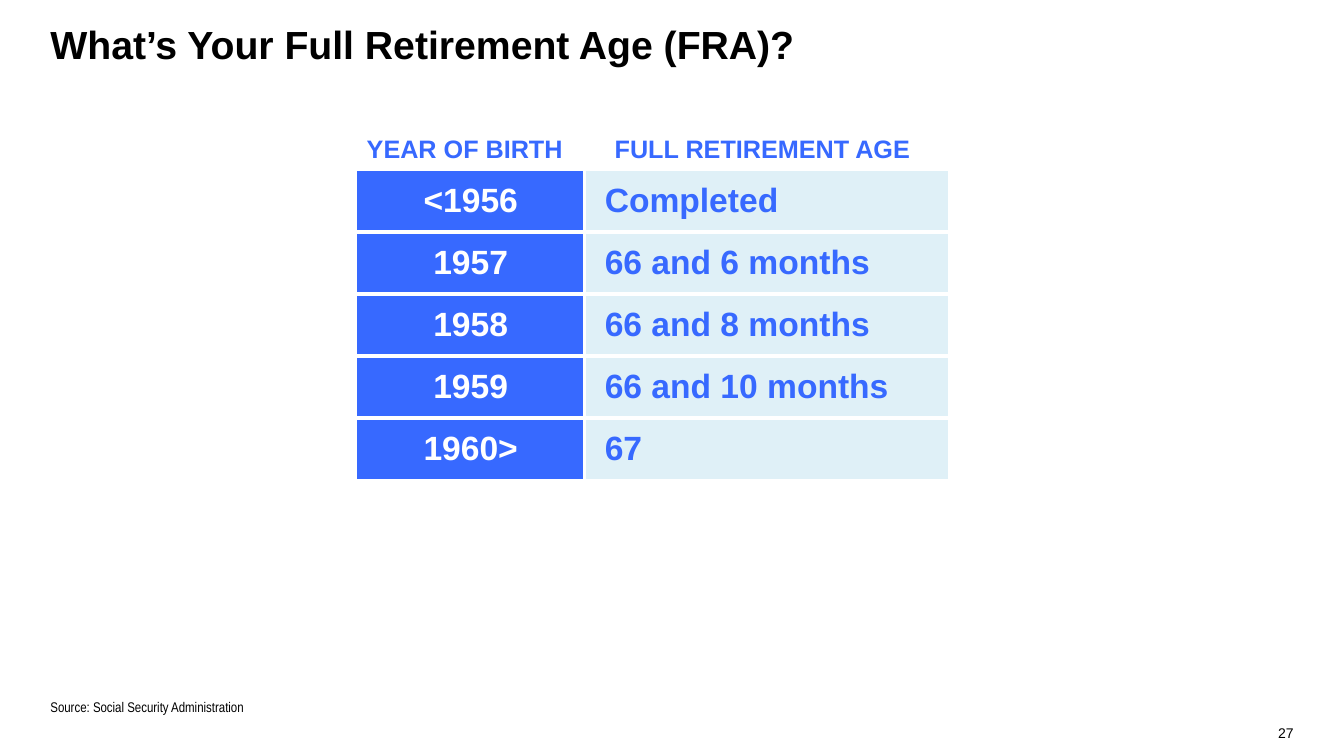
from lxml import etree
from pptx import Presentation, util as u
from pptx.dml.color import RGBColor
from pptx.enum import text
from pptx.oxml.ns import qn

ROWS = [
    ("<1956", "Completed"),
    ("1957", "66 and 6 months"),
    ("1958", "66 and 8 months"),
    ("1959", "66 and 10 months"),
    ("1960>", "67"),
]
BLUE, PALE, WHITE, BLACK = "3769FF", "DFF0F7", "FFFFFF", "000000"
LEFT, MIDDLE, RIGHT = text.PP_ALIGN.LEFT, text.PP_ALIGN.CENTER, text.PP_ALIGN.RIGHT
TOP, CENTRE, BOTTOM = (text.MSO_ANCHOR.TOP, text.MSO_ANCHOR.MIDDLE,
                       text.MSO_ANCHOR.BOTTOM)


def colour(hex_string):
    return RGBColor.from_string(hex_string)


class RetirementSlide:
    """Builds one slide; every box is left, top, width, height in percent of the slide."""

    def __init__(self):
        self.presentation = Presentation()
        self.presentation.slide_width = u.Inches(13.333)
        self.presentation.slide_height = u.Inches(7.5)
        self.slide = self.presentation.slides.add_slide(
            self.presentation.slide_layouts[1])

    def measure(self, box):
        width, height = self.presentation.slide_width, self.presentation.slide_height
        return [round(share * side / 100)
                for share, side in zip(box, (width, height, width, height))]

    def style(self, paragraph, size, hex_string, bold=False, align=LEFT, font="Arial"):
        paragraph.alignment = align
        for run in paragraph.runs:
            run.font.name, run.font.size, run.font.bold = font, u.Pt(size), bold
            run.font.color.rgb = colour(hex_string)

    def fill_text(self, shape, words, anchor, margin=0, wrap=True, **style):
        frame = shape.text_frame
        frame.text = words
        frame.auto_size = text.MSO_AUTO_SIZE.NONE
        frame.word_wrap, frame.vertical_anchor = wrap, anchor
        frame.margin_left = frame.margin_right = u.Inches(margin)
        frame.margin_top = frame.margin_bottom = u.Inches(margin / 2)
        self.style(frame.paragraphs[0], **style)
        return frame.paragraphs[0]

    def placeholder(self, index, words, box, anchor, **style):
        shape = self.slide.placeholders[index]
        shape.left, shape.top, shape.width, shape.height = self.measure(box)
        paragraph = self.fill_text(shape, words, anchor, **style)
        properties = paragraph._p.get_or_add_pPr()
        properties.set("marL", "0")
        properties.set("indent", "0")
        etree.SubElement(properties, qn("a:buNone"))
        paragraph.space_before = u.Pt(0)

    def label(self, words, box, anchor, **style):
        self.fill_text(self.slide.shapes.add_textbox(*self.measure(box)),
                       words, anchor, **style)

    def borders(self, cell, widths):
        """Draws white left, right, top and bottom borders, widths in points."""
        properties = cell._tc.get_or_add_tcPr()
        for side, width in zip("LRTB", widths):
            line = etree.SubElement(properties, qn("a:ln" + side), w=str(u.Pt(width)))
            fill = etree.SubElement(line, qn("a:solidFill"))
            etree.SubElement(fill, qn("a:srgbClr"), val=WHITE)

    def table(self, rows, box, column_shares):
        table = self.slide.shapes.add_table(
            len(rows), len(column_shares), *self.measure(box)).table
        table.first_row = table.horz_banding = False
        for column, share in zip(table.columns, column_shares):
            column.width = self.measure([share])[0]
        looks = [(BLUE, WHITE, MIDDLE, 0.1), (PALE, BLUE, LEFT, 0.2)]
        for row, values in enumerate(rows):
            for column, (words, look) in enumerate(zip(values, looks)):
                fill, ink, align, margin = look
                cell = table.cell(row, column)
                cell.text = words
                cell.vertical_anchor = CENTRE
                cell.margin_left = u.Inches(margin)
                self.borders(cell, (3 if column else 1, 3, 3 if row else 1,
                                    3 if row < len(rows) - 1 else 1))
                cell.fill.solid()
                cell.fill.fore_color.rgb = colour(fill)
                self.style(cell.text_frame.paragraphs[0], 24, ink, True, align)


def main():
    page = RetirementSlide()
    page.placeholder(0, "What’s Your Full Retirement Age (FRA)?",
                     (3.75, 2.67, 71.25, 11.33), TOP,
                     size=28, hex_string=BLACK, bold=True)
    page.placeholder(1, "Source: Social Security Administration",
                     (3.75, 86.8, 92.5, 7.87), BOTTOM,
                     size=10, hex_string=BLACK, font="Arial Narrow")
    page.table(ROWS, (26.55, 22.53, 44.1, 40.93), (16.95, 27.15))
    for heading, left, width in (("YEAR OF BIRTH", 26.55, 16.28),
                                 ("FULL RETIREMENT AGE", 45, 24.23)):
        page.label(heading, (left, 16.93, width, 5.33), TOP, margin=0.1, wrap=False,
                   size=18, hex_string=BLUE, bold=True)
    page.label("27", (93.25, 95.33, 3, 2.67), BOTTOM,
               size=10, hex_string=BLACK, align=RIGHT)
    page.presentation.save("out.pptx")


if __name__ == "__main__":
    main()
